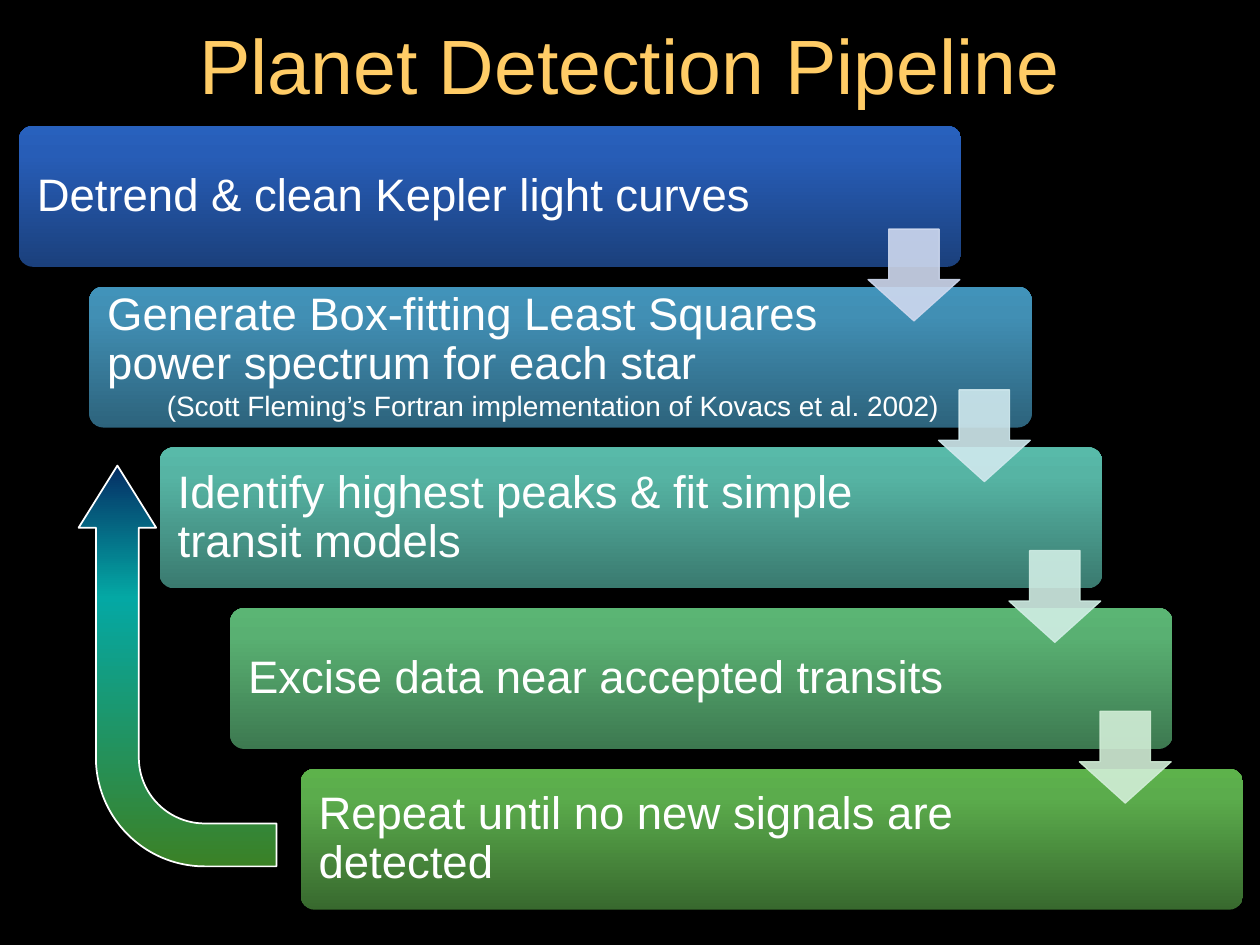
import copy

import lxml.etree
import pptx
import pptx.dml.color
import pptx.enum.dml
import pptx.enum.shapes
import pptx.enum.text
import pptx.oxml.ns
import pptx.util

Cm = pptx.util.Cm
Pt = pptx.util.Pt
RGBColor = pptx.dml.color.RGBColor
SHAPE = pptx.enum.shapes.MSO_SHAPE
ANCHOR = pptx.enum.text.MSO_ANCHOR
ALIGN = pptx.enum.text.PP_ALIGN

BLACK = RGBColor(0x00, 0x00, 0x00)
WHITE = RGBColor(0xFF, 0xFF, 0xFF)
GOLD = RGBColor(0xFF, 0xCC, 0x66)
BLUES = RGBColor(0x1B, 0x40, 0x7C), RGBColor(0x27, 0x5D, 0xB7), RGBColor(0x28, 0x61, 0xBD)
CYANS = RGBColor(0x2D, 0x63, 0x7C), RGBColor(0x41, 0x8F, 0xB4), RGBColor(0x41, 0x93, 0xBA)
TEALS = RGBColor(0x3A, 0x7A, 0x6F), RGBColor(0x56, 0xB4, 0xA4), RGBColor(0x58, 0xBA, 0xA9)
GREENS = RGBColor(0x3D, 0x79, 0x50), RGBColor(0x59, 0xB0, 0x72), RGBColor(0x5B, 0xB5, 0x74)
LIMES = RGBColor(0x38, 0x69, 0x2E), RGBColor(0x5B, 0xAC, 0x4C), RGBColor(0x5D, 0xB2, 0x4B)
LOOP_COLORS = RGBColor(0x3B, 0x81, 0x26), RGBColor(0x04, 0xA8, 0xA4), RGBColor(0x05, 0x2E, 0x65)
ARROW_COLORS = (
    RGBColor(0xCF, 0xD9, 0xEF), RGBColor(0xD0, 0xE9, 0xEE),
    RGBColor(0xD1, 0xEE, 0xE5), RGBColor(0xD2, 0xEE, 0xD7),
)

STAGES = (
    ("Detrend & clean Kepler light curves", BLUES),
    ("Generate Box-fitting Least Squares power spectrum for each star", CYANS),
    ("Identify highest peaks & fit simple transit models", TEALS),
    ("Excise data near accepted transits", GREENS),
    ("Repeat until no new signals are detected", LIMES),
)
CITED_STAGE = 1  # its text sits at the top to leave room for the citation
STEP_X, STEP_Y = 1.42, 3.24


def write_text(frame, text, size, color=WHITE, align=ALIGN.LEFT,
               anchor=ANCHOR.MIDDLE, line_spacing=1.0):
    frame.word_wrap = True
    frame.vertical_anchor = anchor
    paragraph = frame.paragraphs[0]
    paragraph.alignment = align
    paragraph.line_spacing = line_spacing
    run = paragraph.add_run()
    run.text = text
    run.font.name = "Arial"
    run.font.size = Pt(size)
    run.font.color.rgb = color


def fill_gradient(shape, colors, middle, angle):
    """Fill with three colours; the angle runs counter-clockwise."""
    shape.fill.gradient()
    shape.fill.gradient_angle = angle
    stop_list = shape.element.spPr.find(".//" + pptx.oxml.ns.qn("a:gsLst"))
    stop_list.append(copy.deepcopy(stop_list[-1]))
    for stop, color, position in zip(shape.fill.gradient_stops, colors, (0, middle, 1)):
        stop.color.rgb = color
        stop.position = position


def add_preset(slide, kind, left, top, width, height, adjustments):
    shape = slide.shapes.add_shape(kind, Cm(left), Cm(top), Cm(width), Cm(height))
    shape.shadow.inherit = False
    for index, value in enumerate(adjustments):
        shape.adjustments[index] = value
    return shape


def add_stage(slide, index, text, colors):
    box = add_preset(slide, SHAPE.ROUNDED_RECTANGLE, 0.38 + index * STEP_X,
                     2.54 + index * STEP_Y, 19, 2.84, [0.1])
    fill_gradient(box, colors, 0.8, 90)
    box.line.fill.background()
    frame = box.text_frame
    cited = index == CITED_STAGE
    frame.margin_left = frame.margin_bottom = Cm(0.28)
    frame.margin_top = Cm(0 if cited else 0.28)
    frame.margin_right = Cm(3.55)
    write_text(frame, text, 26, line_spacing=0.9,
               anchor=ANCHOR.TOP if cited else ANCHOR.MIDDLE)


def add_stage_arrow(slide, index, color):
    arrow = add_preset(slide, SHAPE.DOWN_ARROW, 17.5 + index * STEP_X,
                       4.62 + index * STEP_Y, 1.85, 1.85, [0.55, 0.45])
    arrow.line.width = Pt(0.75)
    for fill in (arrow.fill, arrow.line.fill):
        fill.solid()
        fill.fore_color.rgb = color
    for rgb in arrow.element.spPr.iter(pptx.oxml.ns.qn("a:srgbClr")):
        lxml.etree.SubElement(rgb, pptx.oxml.ns.qn("a:alpha"), val="90000")


def add_loop_arrow(slide):
    loop = add_preset(slide, SHAPE.BENT_ARROW, -0.46, 11.43, 8.08, 3.99,
                      [0.22, 0.2, 0.32, 0.55])
    for index, value in enumerate((0.217, 0.196, 0.314, 0.55)):
        loop.adjustments[index] = value
    loop.rotation = 270
    fill_gradient(loop, LOOP_COLORS, 0.67, 0)
    loop.line.color.rgb = WHITE
    loop.line.width = Pt(1)


def add_citation(slide):
    citation = slide.shapes.add_textbox(Cm(1.5), Cm(7.7), Cm(19.3), Cm(0.94))
    write_text(citation.text_frame,
               "(Scott Fleming’s Fortran implementation of Kovacs et al. 2002)",
               16, align=ALIGN.CENTER, anchor=ANCHOR.TOP)


def format_title(title):
    title.left, title.top, title.width, title.height = Cm(1.27), Cm(0.03), Cm(22.86), Cm(2.51)
    write_text(title.text_frame, "Planet Detection Pipeline", 44, GOLD, ALIGN.CENTER)


def main():
    presentation = pptx.Presentation()
    presentation.slide_width, presentation.slide_height = Cm(25.4), Cm(19.05)
    slide = presentation.slides.add_slide(presentation.slide_layouts[5])
    slide.background.fill.solid()
    slide.background.fill.fore_color.rgb = BLACK

    format_title(slide.shapes.title)
    for index, (text, colors) in enumerate(STAGES):
        add_stage(slide, index, text, colors)
    for index, color in enumerate(ARROW_COLORS):
        add_stage_arrow(slide, index, color)
    add_loop_arrow(slide)
    add_citation(slide)
    presentation.save("out.pptx")


if __name__ == "__main__":
    main()
